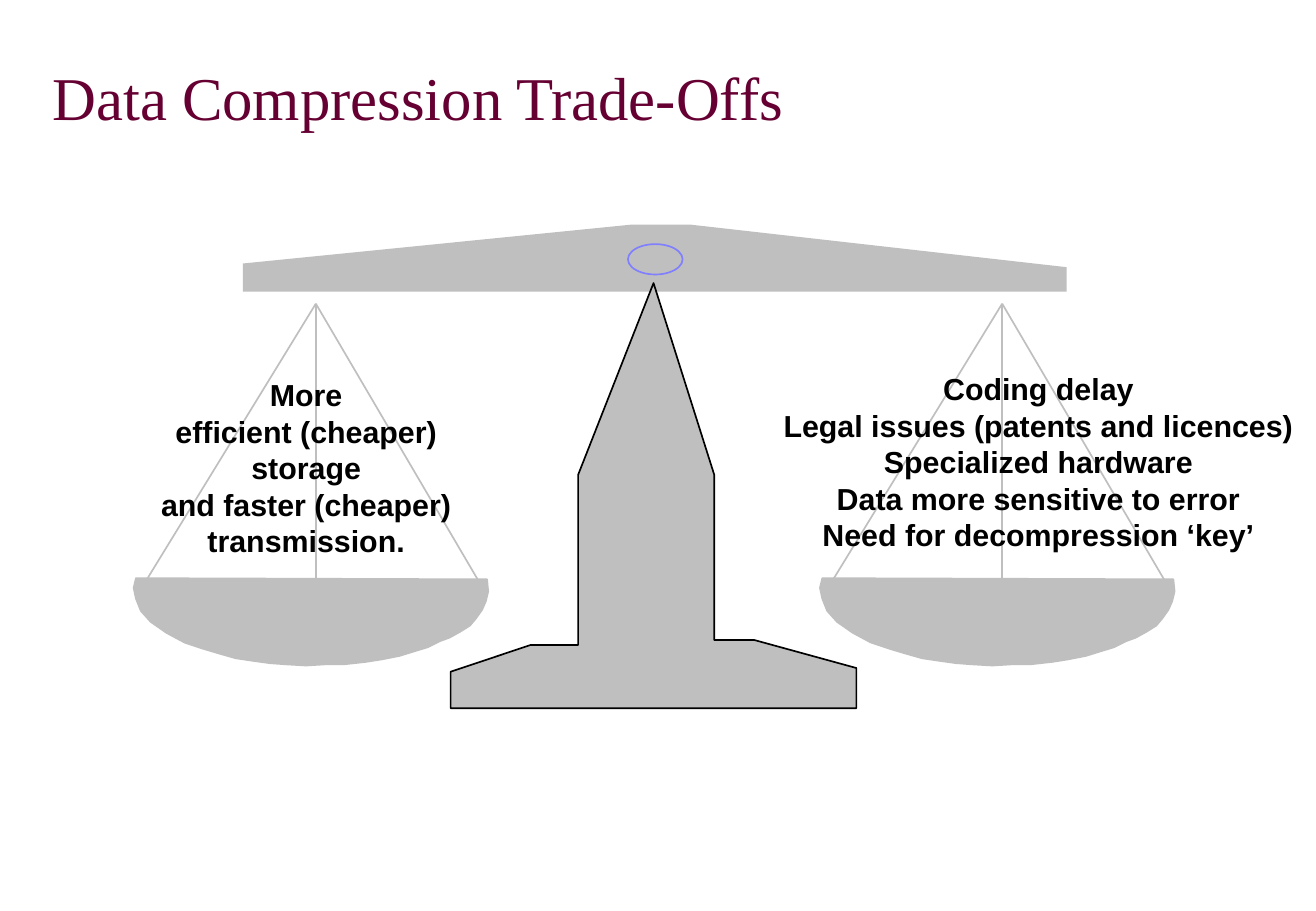
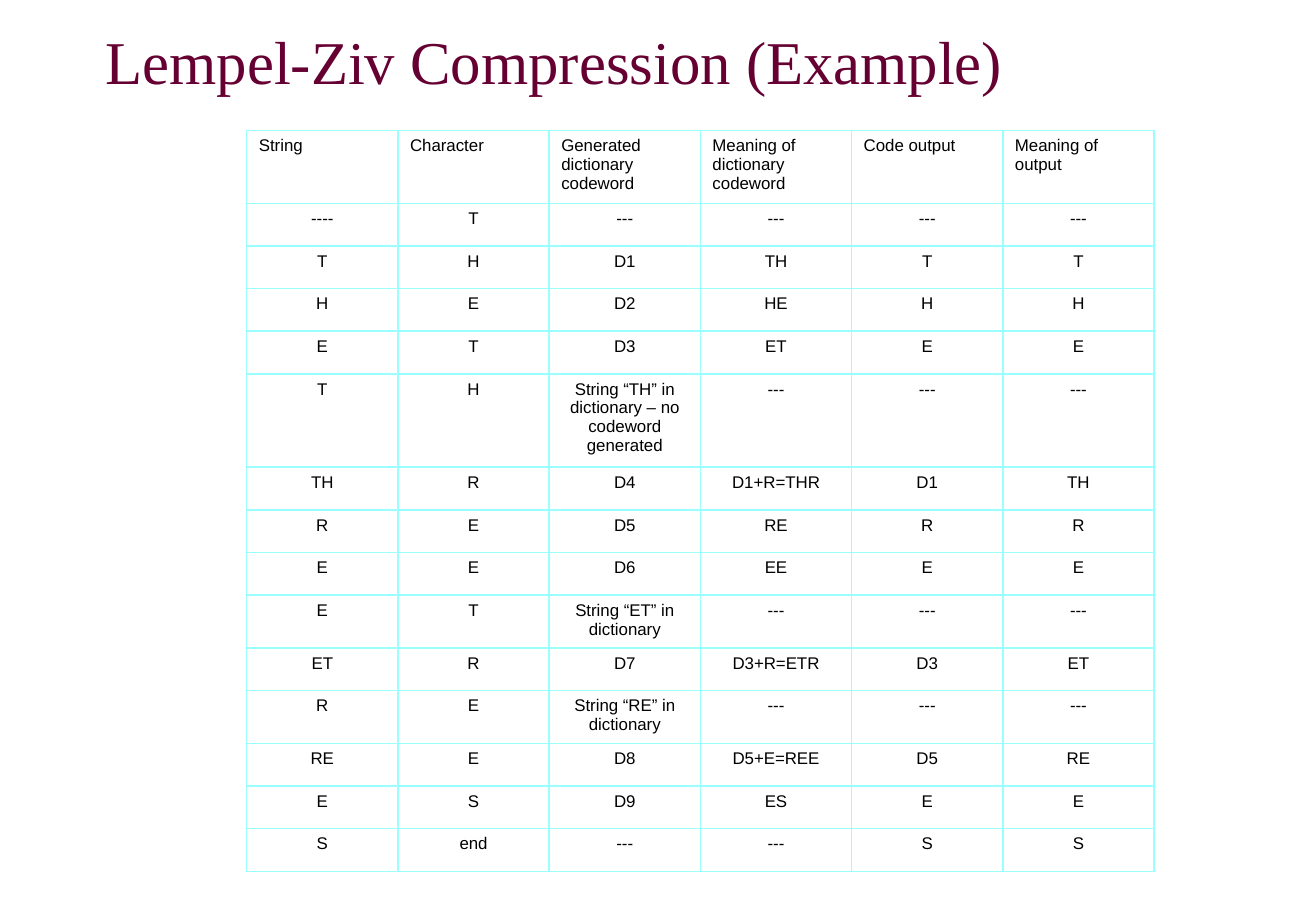
from lxml.etree import SubElement
from pptx import Presentation
from pptx.dml.color import RGBColor
from pptx.enum.shapes import MSO_CONNECTOR as Connector, MSO_SHAPE as Preset
from pptx.enum.text import MSO_ANCHOR as Anchor, PP_ALIGN as Align
from pptx.oxml import parse_xml
from pptx.oxml.ns import nsdecls, qn
from pptx.util import Pt

COLORS = {
    "title": "660033",
    "text": "000000",
    "metal": "BFBFBF",
    "pivot": "8080FF",
    "grid": "99FFFF",
    "paper": "FFFFFF",
}
TITLE_FONT = "Times New Roman"
BODY_FONT = "Arial"

BEAM = [(64.8, 39.6), (553, 39.6), (553, 25.2), (330.5, 0), (294.5, 0), (64.8, 23)]
POST = [
    (308.2, 34.6), (344.2, 148.3), (344.2, 246.2), (367.9, 246.2), (428.4, 262.8),
    (428.4, 286.6), (187.9, 286.6), (187.9, 265), (235.4, 249.1), (263.5, 249.1),
    (263.5, 148.3),
]
BOWL = [
    (1.4, 0), (0, 5.8), (1.4, 12.2), (4.3, 19.4), (10.1, 25.9), (19.4, 32.4),
    (30.2, 38.2), (41, 41.8), (50.4, 44.6), (60.5, 47.5), (70.6, 49), (80.6, 50.4),
    (90, 51.1), (102.2, 51.8), (113.8, 51.1), (124.6, 51.1), (137.5, 49.7),
    (146.9, 48.2), (157.7, 46.1), (167, 43.2), (174.2, 41), (181.4, 37.4),
    (187.2, 35.3), (193.7, 31.7), (199.4, 28.1), (203, 23.8), (206.6, 18.7),
    (208.8, 13.7), (210.2, 7.9), (209.5, 0.7),
]
PAN_APEX = 108
PAN_ROPE_ENDS = [(205.2, 165.6), (108, 163.4), (7.9, 163.4)]
BOWL_TOP = 162.7
PAN_TOP = 46.8
PAN_OFFSETS = (0, 406.8)

BENEFITS = [
    "More",
    "efficient (cheaper)",
    "storage",
    "and faster (cheaper)",
    "transmission.",
]
COSTS = [
    "Coding delay",
    "Legal issues (patents and licences)",
    "Specialized hardware",
    "Data more sensitive to error",
    "Need for decompression ‘key’",
]

NONE = "---"
ENCODING_STEPS = [
    ("String", "Character", "Generated dictionary codeword",
     "Meaning of dictionary codeword", "Code output", "Meaning of output"),
    ("----", "T", NONE, NONE, NONE, NONE),
    ("T", "H", "D1", "TH", "T", "T"),
    ("H", "E", "D2", "HE", "H", "H"),
    ("E", "T", "D3", "ET", "E", "E"),
    ("T", "H", "String “TH” in dictionary – no codeword generated", NONE, NONE, NONE),
    ("TH", "R", "D4", "D1+R=THR", "D1", "TH"),
    ("R", "E", "D5", "RE", "R", "R"),
    ("E", "E", "D6", "EE", "E", "E"),
    ("E", "T", "String “ET” in dictionary", NONE, NONE, NONE),
    ("ET", "R", "D7", "D3+R=ETR", "D3", "ET"),
    ("R", "E", "String “RE” in dictionary", NONE, NONE, NONE),
    ("RE", "E", "D8", "D5+E=REE", "D5", "RE"),
    ("E", "S", "D9", "ES", "E", "E"),
    ("S", "end", NONE, NONE, "S", "S"),
]


def rgb(name):
    return RGBColor.from_string(COLORS[name])


def style_font(paragraph, name, size, color, bold=False):
    for run in paragraph.runs:
        font = run.font
        font.name, font.size, font.bold = name, Pt(size), bold
        font.color.rgb = rgb(color)


def paint(shape, fill, line=None):
    shape.shadow.inherit = False
    shape.fill.solid()
    shape.fill.fore_color.rgb = rgb(fill)
    if line:
        shape.line.color.rgb = rgb(line)
        shape.line.width = Pt(1)
    else:
        shape.line.fill.background()


def add_title(slide, text, left, top, width, height):
    box = slide.shapes.add_textbox(Pt(left), Pt(top), Pt(width), Pt(height))
    frame = box.text_frame
    frame.word_wrap = True
    frame.vertical_anchor = Anchor.MIDDLE
    frame.text = text
    style_font(frame.paragraphs[0], TITLE_FONT, 36, "title")


def add_label(slide, lines, left, top, width):
    """Centred bold lines, one paragraph each."""
    pitch = 21.6
    height = pitch * len(lines) + 7.2
    box = slide.shapes.add_textbox(Pt(left), Pt(top), Pt(width), Pt(height))
    frame = box.text_frame
    frame.word_wrap = False
    frame.text = "\n".join(lines)
    for paragraph in frame.paragraphs:
        paragraph.alignment = Align.CENTER
        paragraph.line_spacing = Pt(pitch)
        style_font(paragraph, BODY_FONT, 18, "text", bold=True)


def add_outline(slide, points, left, top, line=None):
    """Closed metal polygon whose points are relative to left and top."""
    corners = [(Pt(left + x), Pt(top + y)) for x, y in points]
    builder = slide.shapes.build_freeform(*corners[0])
    builder.add_line_segments(corners[1:], close=True)
    paint(builder.convert_to_shape(), "metal", line)


def add_pan(slide, left, top):
    for x, y in PAN_ROPE_ENDS:
        rope = slide.shapes.add_connector(
            Connector.STRAIGHT, Pt(left + PAN_APEX), Pt(top), Pt(left + x), Pt(top + y))
        rope.line.color.rgb = rgb("metal")
        rope.line.width = Pt(1)
        SubElement(rope.element.spPr, qn("a:effectLst"))
    add_outline(slide, BOWL, left, top + BOWL_TOP, "metal")


def add_balance(slide, left, top):
    add_outline(slide, BEAM, left, top)
    pivot = slide.shapes.add_shape(
        Preset.OVAL, Pt(left + 293), Pt(top + 11.5), Pt(32.4), Pt(18))
    paint(pivot, "metal", "pivot")
    add_outline(slide, POST, left, top, "text")
    for offset in PAN_OFFSETS:
        add_pan(slide, left + offset, top + PAN_TOP)


def set_borders(cell):
    properties = cell._tc.get_or_add_tcPr()
    for index, side in enumerate(("lnL", "lnR", "lnT", "lnB")):
        properties.insert(index, parse_xml(
            f'<a:{side} {nsdecls("a")} w="12700"><a:solidFill>'
            f'<a:srgbClr val="{COLORS["grid"]}"/></a:solidFill></a:{side}>'))


def add_steps_table(slide, rows, left, top, width):
    header_height, row_height = 38.2, 25.3
    height = header_height + row_height * (len(rows) - 1)
    columns = len(rows[0])
    table = slide.shapes.add_table(
        len(rows), columns, Pt(left), Pt(top), Pt(width), Pt(height)).table
    table.first_row = table.horz_banding = False
    for column in table.columns:
        column.width = Pt(width / columns)
    for row_index, texts in enumerate(rows):
        is_header = row_index == 0
        table.rows[row_index].height = Pt(header_height if is_header else row_height)
        for column_index, text in enumerate(texts):
            cell = table.cell(row_index, column_index)
            cell.fill.solid()
            cell.fill.fore_color.rgb = rgb("paper")
            set_borders(cell)
            cell.text_frame.text = text
            paragraph = cell.text_frame.paragraphs[0]
            paragraph.alignment = Align.LEFT if is_header else Align.CENTER
            style_font(paragraph, BODY_FONT, 10, "text")


def add_blank_slide(presentation):
    return presentation.slides.add_slide(presentation.slide_layouts[6])


def build_trade_offs(presentation):
    slide = add_blank_slide(presentation)
    add_title(slide, "Data Compression Trade-Offs", 24, 12, 728, 90)
    add_balance(slide, 79.2, 133.2)
    add_label(slide, BENEFITS, 83, 219.6, 197)
    add_label(slide, COSTS, 454.5, 216, 322)


def build_example(presentation):
    slide = add_blank_slide(presentation)
    add_title(slide, "Lempel-Ziv Compression (Example)", 55.5, 0, 663, 72)
    add_steps_table(slide, ENCODING_STEPS, 146.2, 77.2, 537.8)


def main():
    presentation = Presentation()
    presentation.slide_width, presentation.slide_height = Pt(780), Pt(540)
    build_trade_offs(presentation)
    build_example(presentation)
    presentation.save("out.pptx")


if __name__ == "__main__":
    main()
